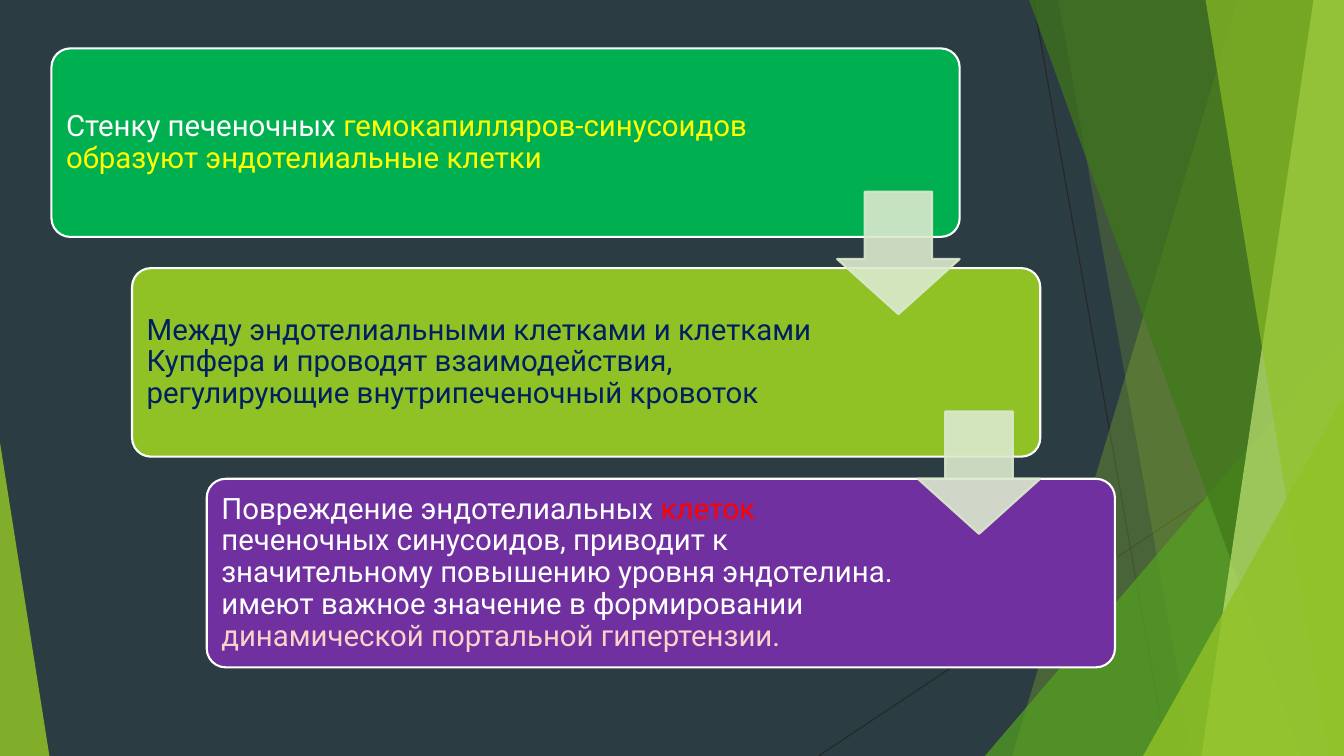
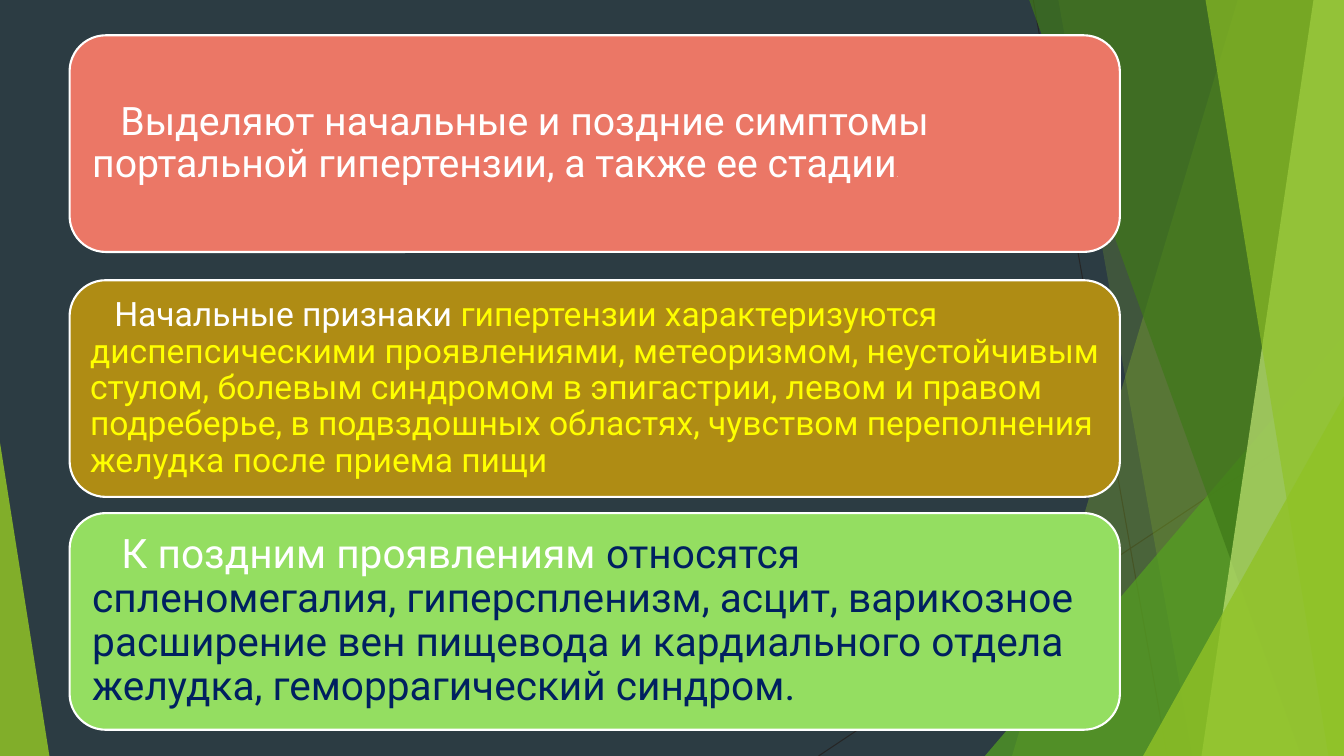
import lxml.etree
import pptx
import pptx.util
import pptx.dml.color
import pptx.enum.shapes
import pptx.enum.text
import pptx.oxml.ns

Inch = pptx.util.Inches
Pt = pptx.util.Pt
KIND = pptx.enum.shapes.MSO_SHAPE
WIDE, HIGH = Inch(13.333), Inch(7.5)
PAGE = (0, 0, WIDE, HIGH)
FONT = "Roboto"
NIGHT, INK, WHITE = "2C3C43", "262626", "FFFFFF"
LIME, GREEN, DARK, PALE = "90C226", "54A021", "3F7819", "C0E474"
YELLOW, NAVY, MIST = "FFFF00", "002060", "DBE9CD"

# Facets from back to front, in shares of the slide.
# "quad": top x, bottom x; "tri": left, top, width, apex.
LINES = [(0.7688, 0, 0.8685, 1), (1, 0.5373, 0.609, 1)]
FACETS = [
    ("quad", (0.921, 0.753), LIME, 30),
    ("quad", (0.7875, 0.8873), LIME, 20),
    ("tri", (0.7328, 0.444, 0.2672, 1), GREEN, 72),
    ("quad", (0.7658, 0.9683), DARK, 70),
    ("quad", (0.9773, 0.894), PALE, 70),
    ("quad", (0.897, 0.9885), LIME, 65),
    ("tri", (0.8505, 0.524, 0.1495, 1), LIME, 80),
    ("tri", (0, 0.5853, 0.0368, 0), LIME, 85),
]

STEPS = [
    (0, 0, "00B050", [
        ("Стенку печеночных ", WHITE),
        ("гемокапилляров-синусоидов образуют эндотелиальные клетки", YELLOW)]),
    (0.0758, 0.355, LIME, [
        ("Между эндотелиальными клетками и клетками Купфера и проводят "
         "взаимодействия, регулирующие внутрипеченочный кровоток", NAVY)]),
    (0.146, 0.6954, "7030A0", [
        ("Повреждение эндотелиальных ", WHITE),
        ("клеток", "FF0000"),
        (" печеночных синусоидов, приводит к значительному повышению уровня "
         "эндотелина. имеют важное значение в формировании ", WHITE),
        ("динамической портальной гипертензии.", "F8D2CC")]),
]

SIGNS = [
    (0, "EB7766", 28, 0.12, [
        ("Выделяют начальные и поздние симптомы портальной гипертензии, "
         "а также ее стадии", WHITE),
        (".", WHITE, 5)]),
    (0.3527, "AF8C14", 24, 0.1, [
        ("Начальные признаки ", WHITE),
        ("гипертензии характеризуются диспепсическими проявлениями, "
         "метеоризмом, неустойчивым стулом, болевым синдромом в эпигастрии, "
         "левом и правом подреберье, в подвздошных областях, чувством "
         "переполнения желудка после приема пищи", YELLOW)]),
    (0.688, "94DE61", 29, 0.12, [
        ("К поздним проявлениям ", WHITE),
        ("относятся спленомегалия, гиперспленизм, асцит, варикозное "
         "расширение вен пищевода и кардиального отдела желудка, "
         "геморрагический синдром.", NAVY)]),
]


def color(text):
    return pptx.dml.color.RGBColor.from_string(text)


def part(box, x, y, w, h):
    """Return the box that takes the given shares of another box."""
    left, top, wide, high = box
    return (round(left + x * wide), round(top + y * high),
            round(w * wide), round(h * high))


def node(parent, tag, **marks):
    lxml.etree.SubElement(parent, pptx.oxml.ns.qn(tag), **marks)


def paint(shape, fill, line=None, alpha=100):
    """Set fill and outline, with one opacity in percent for both."""
    shape.shadow.inherit = False
    shape.fill.solid()
    shape.fill.fore_color.rgb = color(fill)
    if line:
        shape.line.color.rgb = color(line)
        shape.line.width = Pt(1.5)
    else:
        shape.line.fill.background()
    if alpha < 100:
        for tint in shape.element.spPr.iter(pptx.oxml.ns.qn("a:srgbClr")):
            node(tint, "a:alpha", val=str(alpha * 1000))


def write(shape, runs, size, inset, right=None, indent=0):
    """Fill a shape with runs of (text, colour[, size])."""
    frame = shape.text_frame
    frame.word_wrap = True
    frame.vertical_anchor = pptx.enum.text.MSO_ANCHOR.MIDDLE
    frame.margin_left = frame.margin_top = frame.margin_bottom = Inch(inset)
    frame.margin_right = Inch(right or inset)
    para = frame.paragraphs[0]
    para.alignment = pptx.enum.text.PP_ALIGN.LEFT
    para.line_spacing = 0.9
    if indent:
        para._p.get_or_add_pPr().set("indent", str(Inch(indent)))
    for text, tint, *own in runs:
        run = para.add_run()
        run.text = text
        run.font.name = FONT
        run.font.size = Pt(own[0] if own else size)
        run.font.color.rgb = color(tint)


def card(slide, box, fill, bend):
    shape = slide.shapes.add_shape(KIND.ROUNDED_RECTANGLE, *box)
    shape.adjustments[0] = bend
    paint(shape, fill, WHITE)
    return shape


def quad(slide, box, top, base):
    """Draw a facet from a slanted left edge to the right side of the box."""
    left, head, wide, high = box
    right, foot = left + wide, head + high
    pen = slide.shapes.build_freeform(round(left + top * wide), head)
    pen.add_line_segments(
        [(right, head), (right, foot), (round(left + base * wide), foot)])
    return pen.convert_to_shape()


def tri(slide, box, x, y, w, apex):
    """Draw a right triangle that stands on the foot of the box."""
    shape = slide.shapes.add_shape(
        KIND.ISOSCELES_TRIANGLE, *part(box, x, y, w, 1 - y))
    shape.adjustments[0] = apex
    return shape


def decor(slide, box):
    for x, y, end, foot in LINES:
        start = part(box, x, y, 0, 0)[:2]
        stop = part(box, end, foot, 0, 0)[:2]
        line = slide.shapes.add_connector(
            pptx.enum.shapes.MSO_CONNECTOR.STRAIGHT, *start, *stop)
        line.line.color.rgb = color(INK)
        line.line.width = Pt(0.75)
        node(line.element.spPr, "a:effectLst")
    draw = {"quad": quad, "tri": tri}
    for kind, form, fill, alpha in FACETS:
        paint(draw[kind](slide, box, *form), fill, alpha=alpha)


def arrow(slide, box):
    """Hang a square arrow on the lower right corner of a card's box."""
    left, top, wide, high = box
    side = round(0.65 * high)
    shape = slide.shapes.add_shape(
        KIND.DOWN_ARROW, left + wide - side, round(top + 0.76 * high),
        side, side)
    shape.adjustments[0] = 0.55
    shape.adjustments[1] = 0.45
    paint(shape, MIST, MIST, 90)


def stairs(slide, box):
    spots = []
    for x, y, fill, runs in STEPS:
        spot = part(box, x, y, 0.854, 0.3046)
        write(card(slide, spot, fill, 0.1), runs, 21, 0.09, right=2.05)
        spots.append(spot)
    for spot in spots[:-1]:
        arrow(slide, spot)


def stack(slide, box):
    for y, fill, size, inset, runs in SIGNS:
        shape = card(slide, part(box, 0, y, 1, 0.312), fill, 0.1667)
        write(shape, runs, size, inset, indent=size / 100)


def page(deck):
    slide = deck.slides.add_slide(deck.slide_layouts[6])
    slide.background.fill.solid()
    slide.background.fill.fore_color.rgb = color(NIGHT)
    decor(slide, PAGE)
    return slide


def main():
    deck = pptx.Presentation()
    deck.slide_width, deck.slide_height = WIDE, HIGH
    stairs(page(deck), part(PAGE, 0.0383, 0.064, 0.7913, 0.8187))
    stack(page(deck), part(PAGE, 0.0518, 0.0467, 0.7815, 0.9187))
    deck.save("out.pptx")


if __name__ == "__main__":
    main()
